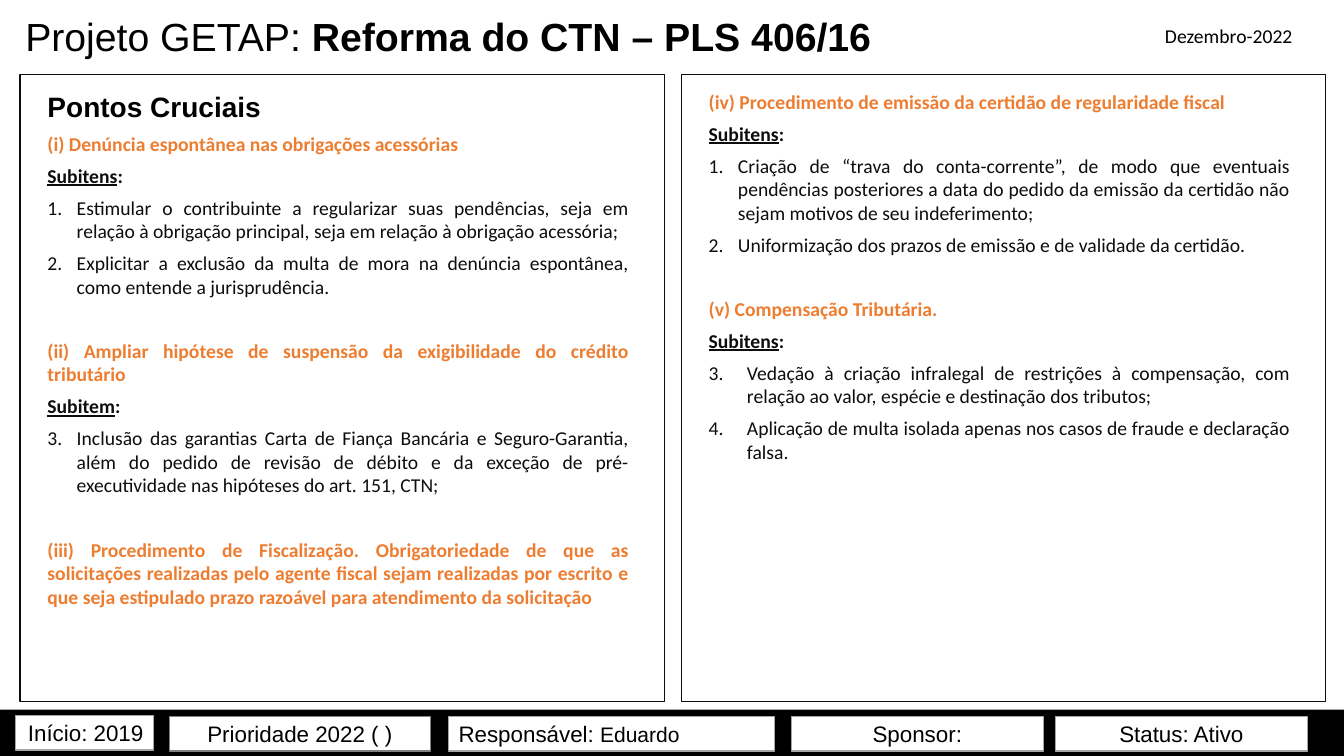
from dataclasses import dataclass

import lxml.etree
import pptx
import pptx.dml.color
import pptx.enum.shapes
import pptx.enum.text
import pptx.oxml.ns
import pptx.util

ALIGN = pptx.enum.text.PP_ALIGN
ANCHOR = pptx.enum.text.MSO_ANCHOR
WIDTH, HEIGHT = pptx.util.Inches(13.33), pptx.util.Inches(7.5)
BLACK, INK, WHITE, ORANGE, GREY = "000000", "0D0D0D", "FFFFFF", "ED7D31", "A6A6A6"
COLUMN_STEP = 49.2  # distance between the two panels
GAP, TOPIC_GAP = 6, 29  # points before a paragraph, and before a new topic


@dataclass
class Box:
    """Percentages of the slide's width and height."""
    left: float
    top: float
    width: float
    height: float

    def emu(self) -> tuple[int, int, int, int]:
        return (across(self.left), down(self.top), across(self.width), down(self.height))


@dataclass
class Topic:
    heading: str
    label: str = ""
    items: tuple[str, ...] = ()
    start: int = 1
    hanging: float = 2.18


@dataclass
class Field:
    box: Box
    label: str
    value: str = ""
    align: int = ALIGN.CENTER
    outline: str = GREY


LEFT_TOPICS = [
    Topic("(i) Denúncia espontânea nas obrigações acessórias", "Subitens", (
        "Estimular o contribuinte a regularizar suas pendências, seja em relação à "
        "obrigação principal, seja em relação à obrigação acessória;",
        "Explicitar a exclusão da multa de mora na denúncia espontânea, como entende "
        "a jurisprudência.")),
    Topic("(ii) Ampliar hipótese de suspensão da exigibilidade do crédito tributário", "Subitem", (
        "Inclusão das garantias Carta de Fiança Bancária e Seguro-Garantia, além do "
        "pedido de revisão de débito e da exceção de pré-executividade nas hipóteses "
        "do art. 151, CTN;",), start=3),
    Topic("(iii) Procedimento de Fiscalização. Obrigatoriedade de que as solicitações "
          "realizadas pelo agente fiscal sejam realizadas por escrito e que seja "
          "estipulado prazo razoável para atendimento da solicitação"),
]
RIGHT_TOPICS = [
    Topic("(iv) Procedimento de emissão da certidão de regularidade fiscal", "Subitens", (
        "Criação de “trava do conta-corrente”, de modo que eventuais pendências "
        "posteriores a data do pedido da emissão da certidão não sejam motivos de seu "
        "indeferimento;",
        "Uniformização dos prazos de emissão e de validade da certidão.")),
    Topic("(v) Compensação Tributária.", "Subitens", (
        "Vedação à criação infralegal de restrições à compensação, com relação ao "
        "valor, espécie e destinação dos tributos;",
        "Aplicação de multa isolada apenas nos casos de fraude e declaração falsa."),
        start=3, hanging=2.85),
]
FIELDS = [
    Field(Box(1.13, 94.67, 10.28, 4.53), "Início: 2019", align=ALIGN.RIGHT),
    Field(Box(12.6, 94.8, 19.43, 4.53), "Prioridade 2022 ( )", outline="808080"),
    Field(Box(33.38, 94.8, 24.23, 4.53), "Responsável: ", "Eduardo", ALIGN.LEFT),
    Field(Box(58.88, 94.8, 18.75, 4.53), "Sponsor:"),
    Field(Box(78.53, 94.8, 18.75, 4.53), "Status: Ativo"),
]


def across(share: float) -> int:
    return round(WIDTH * share / 100)


def down(share: float) -> int:
    return round(HEIGHT * share / 100)


def rgb(color: str) -> pptx.dml.color.RGBColor:
    return pptx.dml.color.RGBColor.from_string(color)


def set_font(font, size: float, color: str, name: str, bold: bool = False) -> None:
    font.size, font.name, font.bold = pptx.util.Pt(size), name, bold
    font.color.rgb = rgb(color)


def place(part, box: Box) -> None:
    part.left, part.top, part.width, part.height = box.emu()


def add_rectangle(slide, box: Box, fill: str = "", outline: str = ""):
    rectangle = slide.shapes.add_shape(
        pptx.enum.shapes.MSO_SHAPE.RECTANGLE, *box.emu())
    rectangle.shadow.inherit = False
    if fill:
        rectangle.fill.solid()
        rectangle.fill.fore_color.rgb = rgb(fill)
    else:
        rectangle.fill.background()
    if outline:
        rectangle.line.color.rgb = rgb(outline)
        rectangle.line.width = pptx.util.Pt(1)
    else:
        rectangle.line.fill.background()
    return rectangle


def add_line(frame, color: str, gap: float, size: float = 14, name: str = "Calibri",
             bold: bool = True, number: int = 0, hanging: float = 0):
    """Append a justified paragraph, numbered when number is given."""
    first = frame.paragraphs[0]
    is_first = not first.runs
    line = first if is_first else frame.add_paragraph()
    properties = line._p.get_or_add_pPr()
    properties.set("marL", str(across(hanging)))
    properties.set("indent", str(-across(hanging)))
    bullet = lxml.etree.SubElement(
        properties, pptx.oxml.ns.qn("a:buAutoNum" if number else "a:buNone"))
    if number:
        bullet.set("type", "arabicPeriod")
        bullet.set("startAt", str(number))
    line.alignment = ALIGN.JUSTIFY
    line.space_before = pptx.util.Pt(0 if is_first else gap)
    set_font(line.font, size, color, name, bold)
    return line


def fill_panel(body, topics: list[Topic], title: str = "") -> None:
    frame = body.text_frame
    frame.auto_size = pptx.enum.text.MSO_AUTO_SIZE.NONE
    frame.vertical_anchor = ANCHOR.TOP
    if title:
        add_line(frame, BLACK, GAP, 20, "Arial").add_run().text = title
    for index, topic in enumerate(topics):
        heading = add_line(frame, ORANGE, TOPIC_GAP if index else GAP)
        heading.add_run().text = topic.heading
        if topic.label:
            label = add_line(frame, INK, GAP)
            name = label.add_run()
            name.text, name.font.underline = topic.label, True
            label.add_run().text = ":"
        for item in topic.items:
            line = add_line(frame, INK, GAP, bold=False,
                            number=topic.start, hanging=topic.hanging)
            line.add_run().text = item


def add_field(slide, field: Field) -> None:
    frame = add_rectangle(slide, field.box, WHITE, field.outline).text_frame
    frame.vertical_anchor = ANCHOR.MIDDLE
    line = frame.paragraphs[0]
    line.alignment = field.align
    set_font(line.font, 16, BLACK, "Arial")
    line.add_run().text = field.label
    if field.value:
        value = line.add_run()
        value.text, value.font.size = field.value, pptx.util.Pt(15)


def main() -> None:
    deck = pptx.Presentation()
    deck.slide_width, deck.slide_height = WIDTH, HEIGHT
    slide = deck.slides.add_slide(deck.slide_layouts.get_by_name("Two Content"))
    heading, *bodies = slide.placeholders

    # Title
    place(heading, Box(1.13, 0.67, 85.35, 7.87))
    heading.text_frame.auto_size = pptx.enum.text.MSO_AUTO_SIZE.NONE
    heading.text_frame.vertical_anchor = ANCHOR.BOTTOM
    title = heading.text_frame.paragraphs[0]
    title.alignment, title.line_spacing = ALIGN.LEFT, 0.9
    set_font(title.font, 28, BLACK, "Arial")
    title.add_run().text = "Projeto GETAP: "
    reform = title.add_run()
    reform.text, reform.font.bold = "Reforma do CTN – PLS 406/16", True

    # Date
    date = slide.shapes.add_textbox(*Box(85.65, 2, 11.55, 5.47).emu()).text_frame
    date.word_wrap, date.vertical_anchor = True, ANCHOR.MIDDLE
    month = date.paragraphs[0]
    month.alignment = ALIGN.CENTER
    set_font(month.font, 14, BLACK, "Calibri")
    month.add_run().text = "Dezembro-2022"

    # Framed panels
    panels = [(LEFT_TOPICS, "Pontos Cruciais"), (RIGHT_TOPICS, "")]
    for column, (body, (topics, panel_title)) in enumerate(zip(bodies, panels)):
        shift = column * COLUMN_STEP
        add_rectangle(slide, Box(1.5 + shift, 9.87, 47.93, 82.93), outline=INK)
        place(body, Box(2.78 + shift, 11.2, 44.78, 77.87))
        fill_panel(body, topics, panel_title)

    # Footer bar with its fields
    add_rectangle(slide, Box(0, 93.87, 100, 6.13), BLACK)
    for field in FIELDS:
        add_field(slide, field)

    deck.save("out.pptx")


if __name__ == "__main__":
    main()
